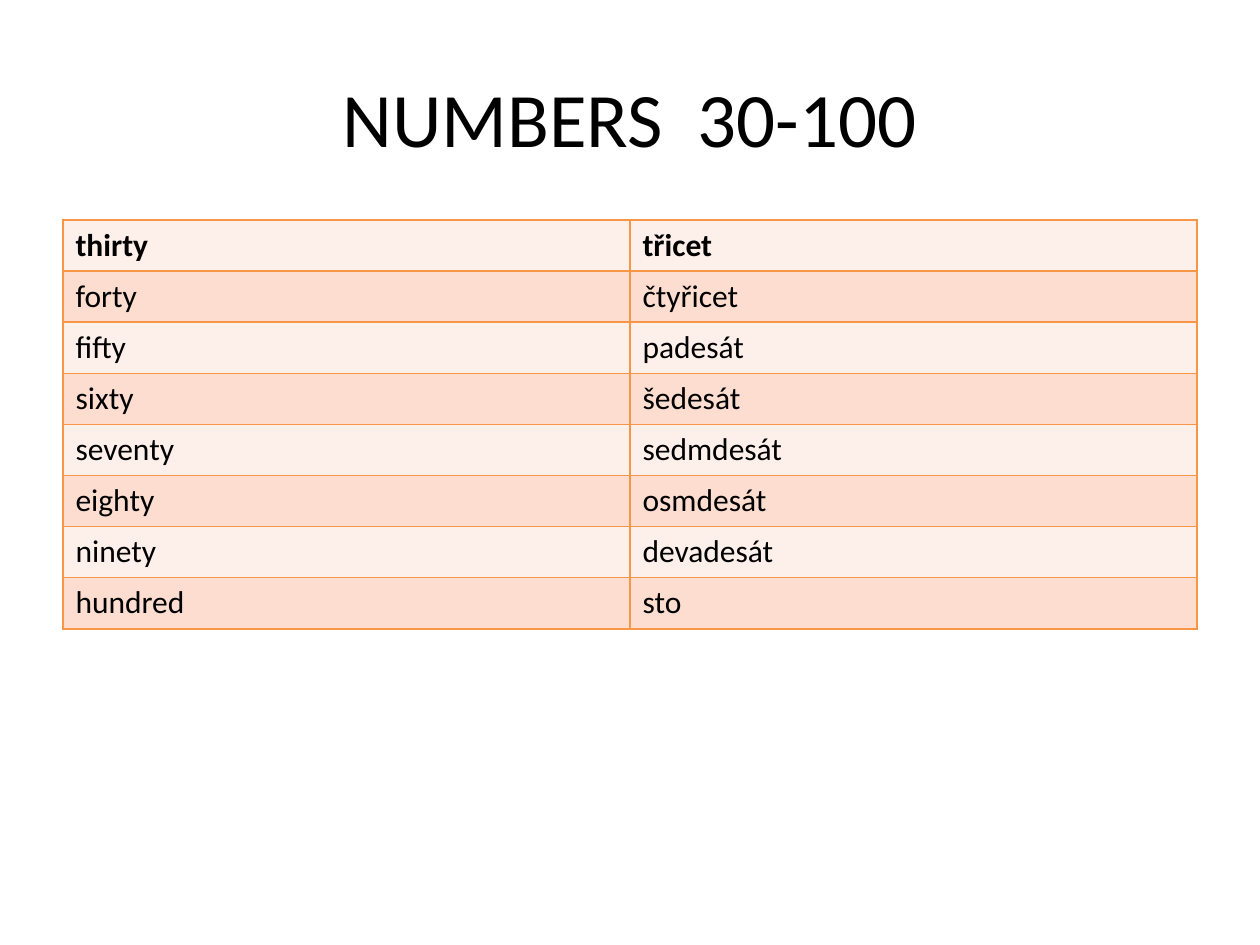
from dataclasses import dataclass

from lxml import etree
from pptx import Presentation
from pptx import util as u
from pptx.dml.color import RGBColor
from pptx.enum import text
from pptx.oxml import ns

PX = 914400 / 126


@dataclass(frozen=True)
class Theme:
    """Colours and type sizes of the slide."""
    font: str = "Calibri"
    ink: str = "000000"
    bands: tuple = ("FDEFE9", "FCDDCF")
    border: str = "F79646"
    title_size: int = 44
    cell_size: int = 18


THEME = Theme()
NUMBERS = [
    ("thirty", "třicet"),
    ("forty", "čtyřicet"),
    ("fifty", "padesát"),
    ("sixty", "šedesát"),
    ("seventy", "sedmdesát"),
    ("eighty", "osmdesát"),
    ("ninety", "devadesát"),
    ("hundred", "sto"),
]


def px(length):
    """Turn px into EMU."""
    return u.Emu(round(length * PX))


def style(paragraph, size, bold=False):
    """Set the font of a paragraph."""
    font = paragraph.font
    font.name, font.size, font.bold = THEME.font, u.Pt(size), bold
    font.color.rgb = RGBColor.from_string(THEME.ink)


def add_borders(cell):
    """Draw a thin line on all four sides of a cell."""
    properties = cell._tc.get_or_add_tcPr()
    for side in ("a:lnL", "a:lnR", "a:lnT", "a:lnB"):
        line = etree.SubElement(properties, ns.qn(side), w=str(u.Pt(1)))
        fill = etree.SubElement(line, ns.qn("a:solidFill"))
        etree.SubElement(fill, ns.qn("a:srgbClr"), val=THEME.border)


def place_title(slide, wording, left, top, width, height):
    """Fill the title placeholder and fit it to its box."""
    title = slide.shapes.title
    title.left, title.top = px(left), px(top)
    title.width, title.height = px(width), px(height)
    frame = title.text_frame
    frame.text = wording
    frame.vertical_anchor = text.MSO_ANCHOR.MIDDLE
    heading = frame.paragraphs[0]
    heading.alignment = text.PP_ALIGN.CENTER
    style(heading, THEME.title_size)


def place_vocabulary(slide, pairs, left, top, width, height):
    """Lay out the word pairs as a banded table with a bold first row."""
    vocabulary = slide.shapes.add_table(
        len(pairs), len(pairs[0]), px(left), px(top), px(width), px(height)
    ).table
    for column in vocabulary.columns:
        column.width = px(width / len(pairs[0]))
    for r, pair in enumerate(pairs):
        vocabulary.rows[r].height = px(height / len(pairs))
        for c, word in enumerate(pair):
            cell = vocabulary.cell(r, c)
            cell.text = word
            style(cell.text_frame.paragraphs[0], THEME.cell_size, bold=r == 0)
            add_borders(cell)
            cell.fill.solid()
            cell.fill.fore_color.rgb = RGBColor.from_string(THEME.bands[r % 2])


def main():
    """Build and save the slide."""
    deck = Presentation()
    deck.slide_width, deck.slide_height = px(1260), px(945)
    slide = deck.slides.add_slide(deck.slide_layouts[5])
    place_title(slide, "NUMBERS  30-100", 63, 38, 1134, 158)
    place_vocabulary(slide, NUMBERS, 63, 220, 1134, 408)
    deck.save("out.pptx")


if __name__ == "__main__":
    main()
